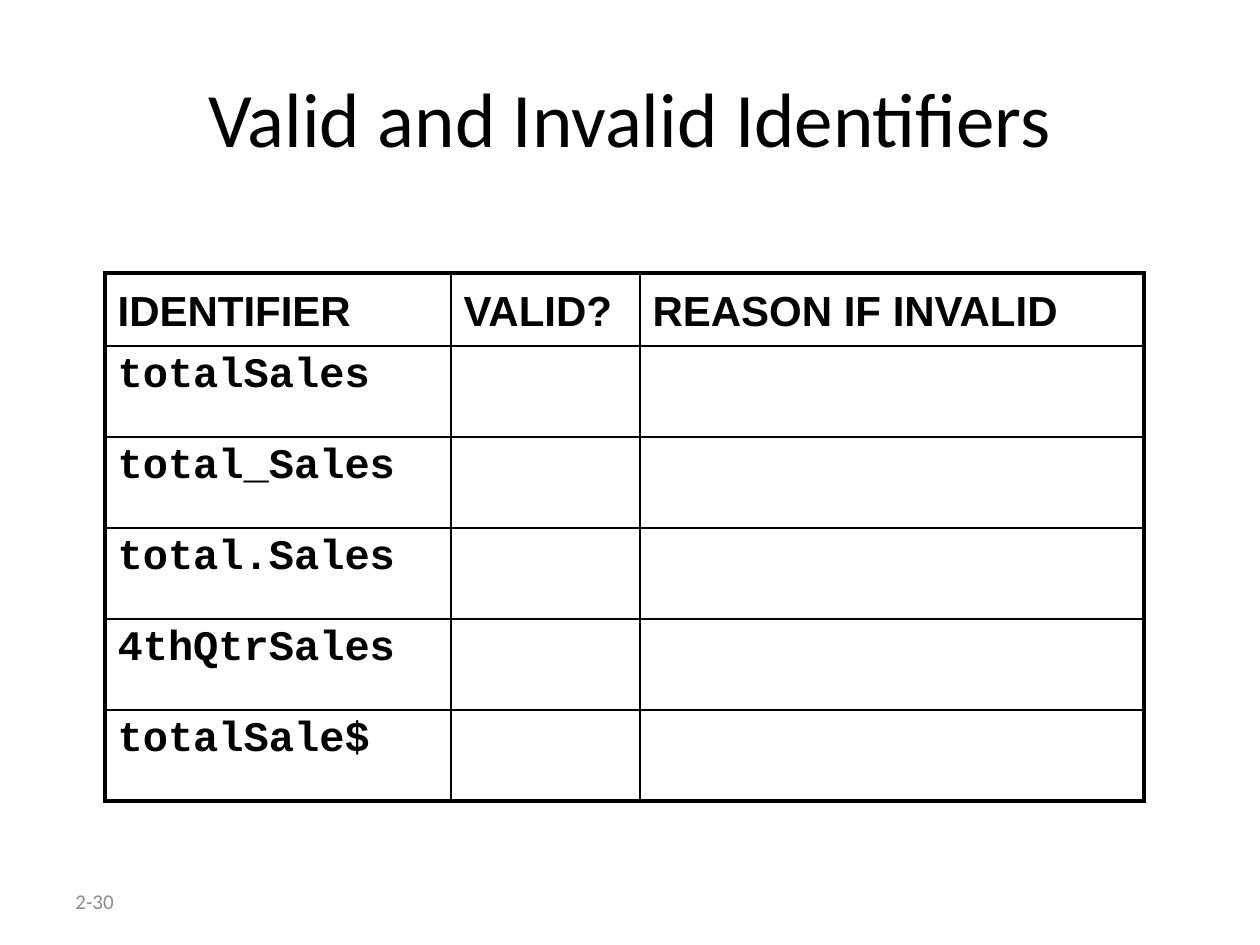
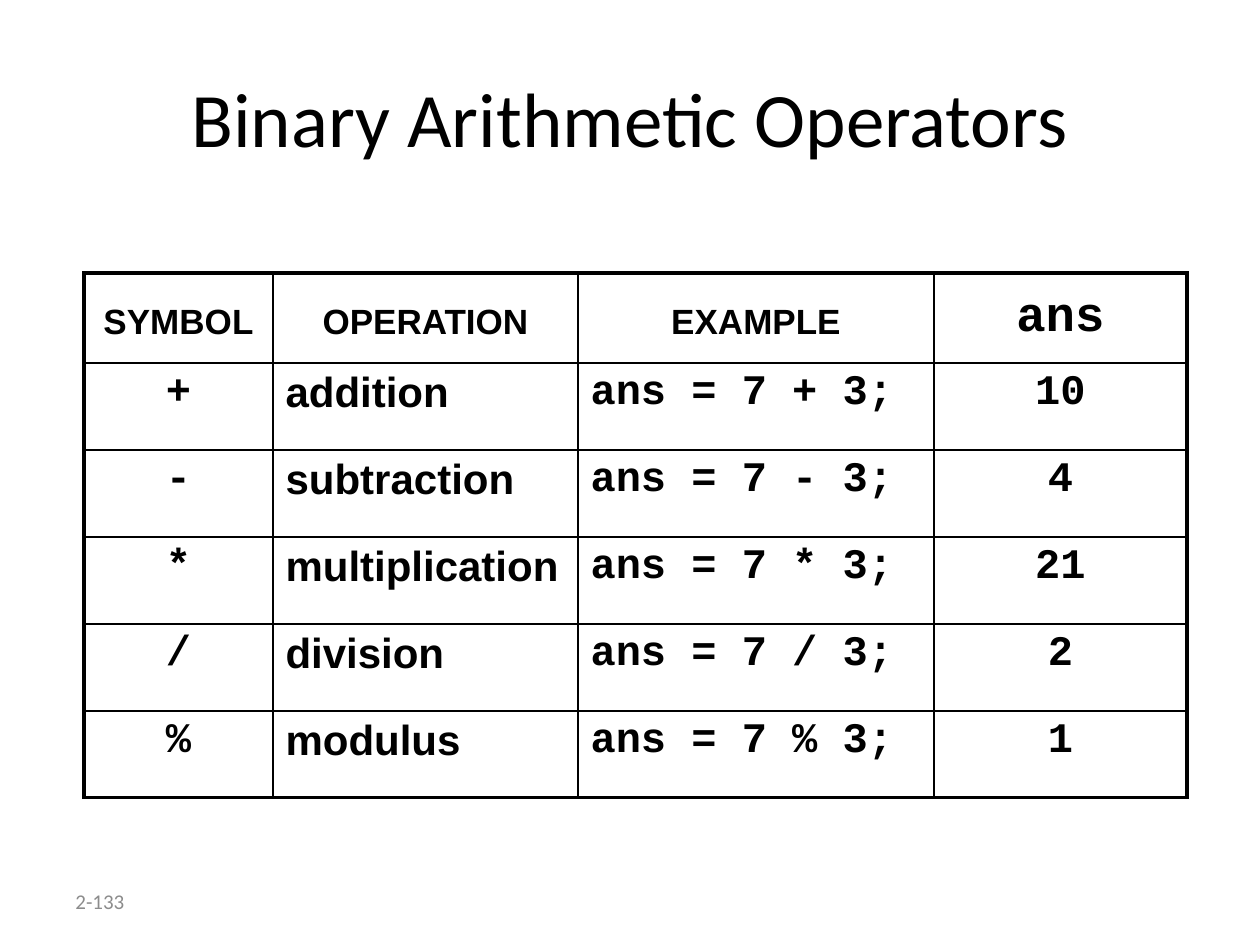
"""Build two slides of programming tables: identifiers and arithmetic operators."""
from dataclasses import dataclass

from lxml import etree
from pptx import Presentation
from pptx import util as u
from pptx.dml.color import RGBColor
from pptx.enum import text
from pptx.oxml.ns import qn

SCALE = 914400 / 126
LEFT, CENTER = text.PP_ALIGN.LEFT, text.PP_ALIGN.CENTER


@dataclass(frozen=True)
class Theme:
    ink: str = "000000"
    muted: str = "8C8C8C"
    title_font: str = "Calibri"
    label_font: str = "Arial"
    code_font: str = "Courier New"
    title_size: int = 44
    ans_size: int = 28
    body_size: int = 24
    symbol_size: int = 20
    footer_size: int = 12
    outer_line: float = 2.25
    inner_line: float = 1


theme = Theme()


def px(length):
    return u.Emu(round(length * SCALE))


def write(frame, words, font, size, color=theme.ink, align=LEFT, spacing=1.0, bold=False):
    paragraph = frame.paragraphs[0]
    run = paragraph.add_run()
    run.text = words
    for name, value in {"alignment": align, "line_spacing": spacing, "space_before": u.Pt(0)}.items():
        setattr(paragraph, name, value)
    for name, value in {"name": font, "size": u.Pt(size), "bold": bold}.items():
        setattr(run.font, name, value)
    run.font.color.rgb = RGBColor.from_string(color)


label, code = theme.label_font, theme.code_font
identifiers = ["totalSales", "total_Sales", "total.Sales", "4thQtrSales", "totalSale$"]
operators = [
    ("+", "addition", "10"),
    ("-", "subtraction", "4"),
    ("*", "multiplication", "21"),
    ("/", "division", "2"),
    ("%", "modulus", "1"),
]
identifier_header = (label, theme.body_size, LEFT, 1.2)
operator_header = (label, theme.symbol_size, CENTER, 1.6)

slides = [
    {
        "title": "Valid and Invalid Identifiers",
        "number": "2-30",
        "left": 105,
        "columns": [346, 189, 504],
        "heights": (70, 91),
        "header": ["IDENTIFIER", "VALID?", "REASON IF INVALID"],
        "header_styles": [identifier_header] * 3,
        "body": [(name, "", "") for name in identifiers],
        "body_styles": [(code, LEFT), (label, LEFT), (label, LEFT)],
    },
    {
        "title": "Binary Arithmetic Operators",
        "number": "2-133",
        "left": 84,
        "columns": [189, 305, 356, 253],
        "heights": (90, 87),
        "header": ["SYMBOL", "OPERATION", "EXAMPLE", "ans"],
        "header_styles": [operator_header] * 3 + [(code, theme.ans_size, CENTER, 1.2)],
        "body": [(sign, name, f"ans = 7 {sign} 3;", answer) for sign, name, answer in operators],
        "body_styles": [(code, CENTER), (label, LEFT), (code, LEFT), (code, CENTER)],
    },
]

presentation = Presentation()
presentation.slide_width, presentation.slide_height = px(1260), px(945)

for content in slides:
    slide = presentation.slides.add_slide(presentation.slide_layouts[5])
    title = slide.shapes.title
    for name, value in {"left": 63, "top": 38, "width": 1134, "height": 157}.items():
        setattr(title, name, px(value))
    title.text_frame.vertical_anchor = text.MSO_ANCHOR.MIDDLE
    write(title.text_frame, content["title"], theme.title_font, theme.title_size, align=CENTER)

    footer = slide.shapes.add_textbox(px(63), px(876), px(294), px(50)).text_frame
    footer.word_wrap = True
    footer.vertical_anchor = text.MSO_ANCHOR.MIDDLE
    write(footer, content["number"], theme.title_font, theme.footer_size, theme.muted)

    header_height, body_height = content["heights"]
    rows = [content["header"]] + content["body"]
    heights = [header_height] + [body_height] * len(content["body"])
    columns = content["columns"]
    table = slide.shapes.add_table(
        len(rows), len(columns), px(content["left"]), px(273), px(sum(columns)), px(sum(heights))
    ).table
    table.first_row = table.horz_banding = False
    for column, width in zip(table.columns, columns):
        column.width = px(width)
    for row, height in zip(table.rows, heights):
        row.height = px(height)

    last_row, last_column = len(rows) - 1, len(columns) - 1
    for row_index, row in enumerate(rows):
        for column_index, words in enumerate(row):
            cell = table.cell(row_index, column_index)
            cell.fill.background()
            if row_index == 0:
                font, size, align, spacing = content["header_styles"][column_index]
            else:
                font, align = content["body_styles"][column_index]
                size, spacing = theme.body_size, 1.0
            if words:
                write(cell.text_frame, words, font, size, align=align, spacing=spacing, bold=True)

            outer_edges = {
                "a:lnL": column_index == 0,
                "a:lnR": column_index == last_column,
                "a:lnT": row_index == 0,
                "a:lnB": row_index == last_row,
            }
            properties = cell._tc.get_or_add_tcPr()
            for position, (tag, outer) in enumerate(outer_edges.items()):
                width = theme.outer_line if outer else theme.inner_line
                line = etree.Element(qn(tag), w=str(u.Pt(width)))
                fill = etree.SubElement(line, qn("a:solidFill"))
                etree.SubElement(fill, qn("a:srgbClr"), val=theme.ink)
                properties.insert(position, line)

presentation.save("out.pptx")
